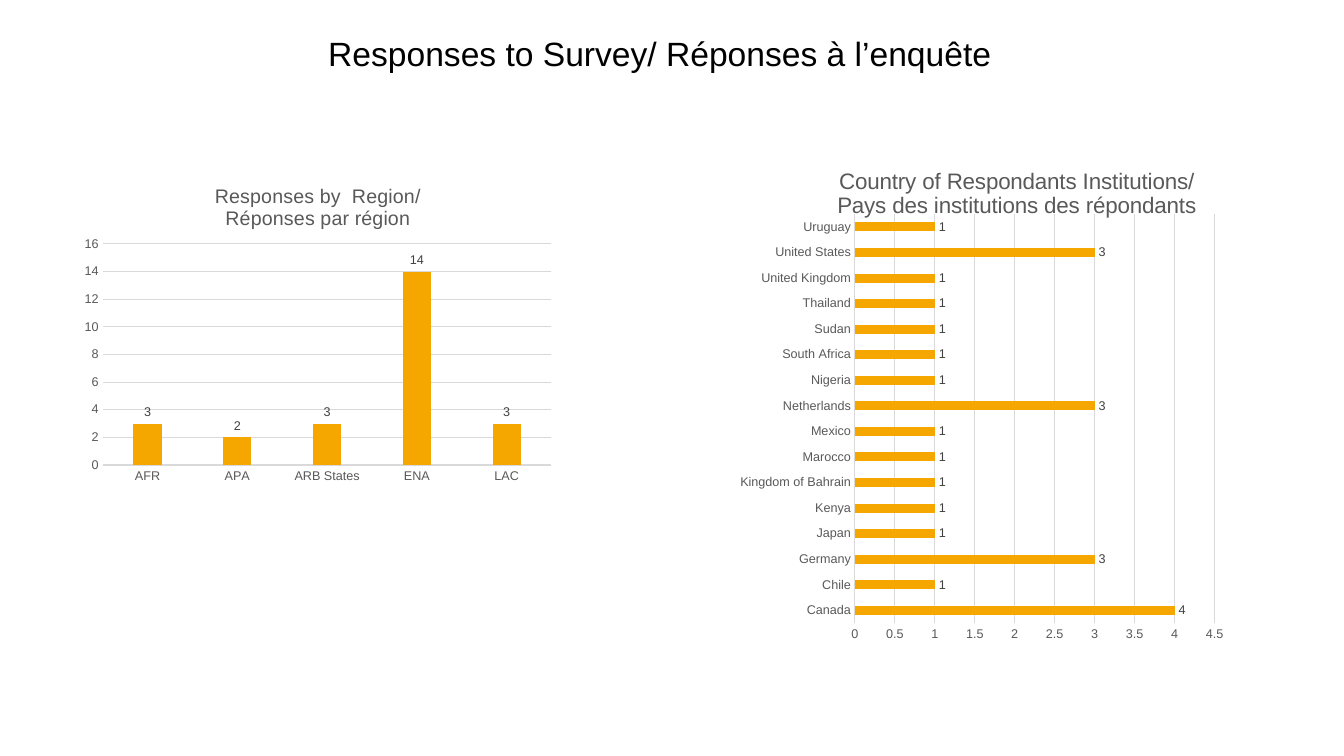
from lxml import etree
from pptx import Presentation
from pptx.chart.data import CategoryChartData
from pptx.dml.color import RGBColor
from pptx.enum.chart import XL_CHART_TYPE, XL_LABEL_POSITION, XL_TICK_MARK
from pptx.enum.text import MSO_ANCHOR, PP_ALIGN
from pptx.oxml.ns import qn
from pptx.util import Cm, Pt

FONT = "Arial"
BLACK = RGBColor(0x00, 0x00, 0x00)
DARK_GREY = RGBColor(0x40, 0x40, 0x40)
GREY = RGBColor(0x59, 0x59, 0x59)
LIGHT_GREY = RGBColor(0xD9, 0xD9, 0xD9)
ORANGE = RGBColor(0xF5, 0xA7, 0x00)

REGIONS = {"AFR": 3, "APA": 2, "ARB States": 3, "ENA": 14, "LAC": 3}
COUNTRIES = {
    "Canada": 4, "Chile": 1, "Germany": 3, "Japan": 1, "Kenya": 1,
    "Kingdom of Bahrain": 1, "Marocco": 1, "Mexico": 1, "Netherlands": 3,
    "Nigeria": 1, "South Africa": 1, "Sudan": 1, "Thailand": 1,
    "United Kingdom": 1, "United States": 3, "Uruguay": 1,
}


def style_font(font, size, color):
    font.name = FONT
    font.size = Pt(size)
    font.bold = False
    font.color.rgb = color


def set_layout(parent, position, settings):
    """Place a chart part by fractions of the chart's width and height."""
    for old_layout in parent.findall(qn("c:layout")):
        parent.remove(old_layout)
    layout = etree.Element(qn("c:layout"))
    manual = etree.SubElement(layout, qn("c:manualLayout"))
    for name, value in settings.items():
        etree.SubElement(manual, qn(f"c:{name}")).set("val", str(value))
    parent.insert(position, layout)


presentation = Presentation()
presentation.slide_width = Cm(33.87)
presentation.slide_height = Cm(19.05)
slide = presentation.slides.add_slide(presentation.slide_layouts[6])

# Slide title
title_box = slide.shapes.add_textbox(Cm(2.02), Cm(0.56), Cm(29.21), Cm(1.68))
title_frame = title_box.text_frame
title_frame.word_wrap = True
title_frame.vertical_anchor = MSO_ANCHOR.MIDDLE
paragraph = title_frame.paragraphs[0]
paragraph.alignment = PP_ALIGN.CENTER
paragraph.line_spacing = 0.9
run = paragraph.add_run()
run.text = "Responses to Survey/ Réponses à l’enquête"
style_font(run.font, 24, BLACK)

# Charts: type, box, data, title lines and size, gap, overlap, axis top and
# step, title corner, plot rectangle
charts = [
    (XL_CHART_TYPE.COLUMN_CLUSTERED, (1.9, 4.14, 12.27, 8.23), REGIONS,
     ("Responses by  Region/", "Réponses par région"), 14, 219, -27, 16, 2,
     (0.28, 0.05), (0.056, 0.244, 0.922, 0.677)),
    (XL_CHART_TYPE.BAR_CLUSTERED, (18.42, 3.25, 12.7, 13.18), COUNTRIES,
     ("Country of Respondants Institutions/",
      "Pays des institutions des répondants"), 16, 182, 0, 4.5, 0.5,
     (0.205, 0.067), (0.246, 0.163, 0.714, 0.782)),
]

for (chart_type, box, responses, title_lines, title_size, gap, overlap,
     axis_top, axis_step, title_corner, plot_area) in charts:
    chart_data = CategoryChartData()
    chart_data.categories = list(responses)
    chart_data.add_series("Series 1", list(responses.values()))
    chart = slide.shapes.add_chart(
        chart_type, *(Cm(length) for length in box), chart_data).chart
    style_font(chart.font, 10, BLACK)
    chart.has_legend = False

    # Chart title
    chart.has_title = True
    chart_title = chart.chart_title
    for number, line in enumerate(title_lines):
        frame = chart_title.text_frame
        paragraph = frame.add_paragraph() if number else frame.paragraphs[0]
        paragraph.alignment = PP_ALIGN.CENTER
        run = paragraph.add_run()
        run.text = line
        style_font(run.font, title_size, GREY)
    set_layout(chart_title._element, 1, {
        "xMode": "edge", "yMode": "edge",
        "x": title_corner[0], "y": title_corner[1]})

    # Plot area
    left, top, width, height = plot_area
    set_layout(chart._chartSpace.chart.plotArea, 0, {
        "layoutTarget": "inner", "xMode": "edge", "yMode": "edge",
        "x": left, "y": top, "w": width, "h": height})

    # Axes
    for axis in (chart.category_axis, chart.value_axis):
        axis.major_tick_mark = XL_TICK_MARK.NONE
        axis.minor_tick_mark = XL_TICK_MARK.NONE
        style_font(axis.tick_labels.font, 9, GREY)
    category_line = chart.category_axis.format.line
    chart.value_axis.has_major_gridlines = True
    grid_line = chart.value_axis.major_gridlines.format.line
    for line in (category_line, grid_line):
        line.color.rgb = LIGHT_GREY
        line.width = Pt(0.75)
    chart.value_axis.format.line.fill.background()
    chart.value_axis.minimum_scale = 0
    chart.value_axis.maximum_scale = axis_top
    chart.value_axis.major_unit = axis_step

    # Bars and value labels
    plot = chart.plots[0]
    plot.vary_by_categories = False
    plot.gap_width = gap
    plot.overlap = overlap
    series = plot.series[0]
    series.format.fill.solid()
    series.format.fill.fore_color.rgb = ORANGE
    labels = series.data_labels
    labels.show_value = True
    labels.position = XL_LABEL_POSITION.OUTSIDE_END
    style_font(labels.font, 9, DARK_GREY)

presentation.save("out.pptx")
